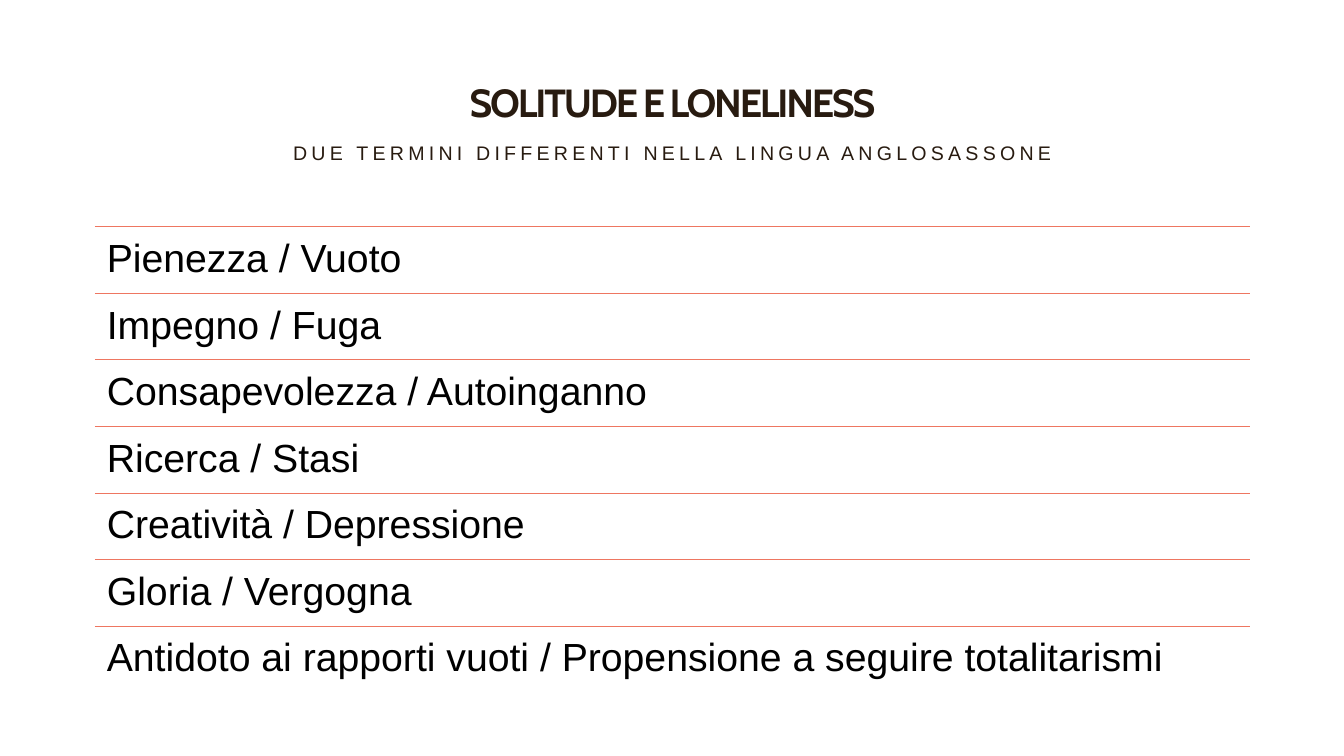
from lxml import etree
from pptx import Presentation
from pptx.dml.color import RGBColor
from pptx.enum.shapes import MSO_CONNECTOR
from pptx.enum.text import MSO_ANCHOR, PP_ALIGN
from pptx.oxml.ns import qn
from pptx.util import Inches, Pt

STRAIGHT = MSO_CONNECTOR.STRAIGHT
TOP, MIDDLE, BOTTOM = MSO_ANCHOR.TOP, MSO_ANCHOR.MIDDLE, MSO_ANCHOR.BOTTOM
LEFT, CENTER = PP_ALIGN.LEFT, PP_ALIGN.CENTER

CONTRASTS = [
    "Pienezza / Vuoto",
    "Impegno / Fuga",
    "Consapevolezza / Autoinganno",
    "Ricerca / Stasi",
    "Creatività / Depressione",
    "Gloria / Vergogna",
    "Antidoto ai rapporti vuoti / Propensione a seguire totalitarismi",
]
LIST_LEFT, LIST_TOP, LIST_WIDTH, ROW_HEIGHT = 0.94, 2.25, 11.46, 0.66


def color(value):
    """Turn a hex string into a colour."""
    return RGBColor.from_string(value)


class ContrastSlide:
    """Hold the style and the slide being drawn."""

    heading_font = "Cabin"
    body_font = "Arial"
    heading_color = "281B10"
    body_color = "000000"
    rule_color = "EE7661"

    def __init__(self, slide):
        """Keep the slide that receives the elements."""
        self.slide = slide

    def text(self, words, left, top, width, height, size, font, ink,
             anchor=TOP, align=LEFT, inset=(0.1, 0.05), before=0, after=0,
             tracking=0, bold=False):
        """Add a wrapped text box with one paragraph."""
        box = self.slide.shapes.add_textbox(
            Inches(left), Inches(top), Inches(width), Inches(height))
        frame = box.text_frame
        frame.word_wrap = True
        frame.vertical_anchor = anchor
        frame.margin_left = frame.margin_right = Inches(inset[0])
        frame.margin_top = frame.margin_bottom = Inches(inset[1])
        paragraph = frame.paragraphs[0]
        paragraph.alignment = align
        paragraph.line_spacing = 0.9
        paragraph.space_before = Pt(before)
        paragraph.space_after = Pt(after)
        run = paragraph.add_run()
        run.text = words
        run.font.name = font
        run.font.size = Pt(size)
        run.font.bold = bold
        run.font.color.rgb = color(ink)
        if tracking:
            run.font._element.set("spc", str(int(tracking * 100)))

    def heading(self, words):
        """Add the slide title."""
        self.text(words, 0.71, 0.32, 11.92, 0.98, 28, self.heading_font,
                  self.heading_color, BOTTOM, CENTER, after=6,
                  tracking=-1.5, bold=True)

    def subheading(self, words):
        """Add the widely spaced line under the title."""
        self.text(words, 0.71, 1.2, 11.92, 0.66, 14, self.body_font,
                  self.heading_color, MIDDLE, CENTER, before=10, tracking=3)

    def rule(self, left, top, width):
        """Add a thin horizontal line."""
        line = self.slide.shapes.add_connector(
            STRAIGHT, Inches(left), Inches(top),
            Inches(left + width), Inches(top))
        line.line.color.rgb = color(self.rule_color)
        line.line.width = Pt(0.5)
        etree.SubElement(line._element.spPr, qn("a:effectLst"))

    def contrast(self, words, top):
        """Add a row with its rule on top."""
        self.rule(LIST_LEFT, top, LIST_WIDTH)
        self.text(words, LIST_LEFT, top, LIST_WIDTH, ROW_HEIGHT, 28,
                  self.body_font, self.body_color, inset=(0.12, 0.12))


def main():
    """Build and save the presentation."""
    deck = Presentation()
    deck.slide_width = Inches(13.33)
    deck.slide_height = Inches(7.5)
    page = ContrastSlide(deck.slides.add_slide(deck.slide_layouts[6]))
    page.heading("SOLITUDE E LONELINESS")
    page.subheading("DUE TERMINI DIFFERENTI NELLA LINGUA ANGLOSASSONE")
    for row, words in enumerate(CONTRASTS):
        page.contrast(words, LIST_TOP + row * ROW_HEIGHT)
    deck.save("out.pptx")


if __name__ == "__main__":
    main()
